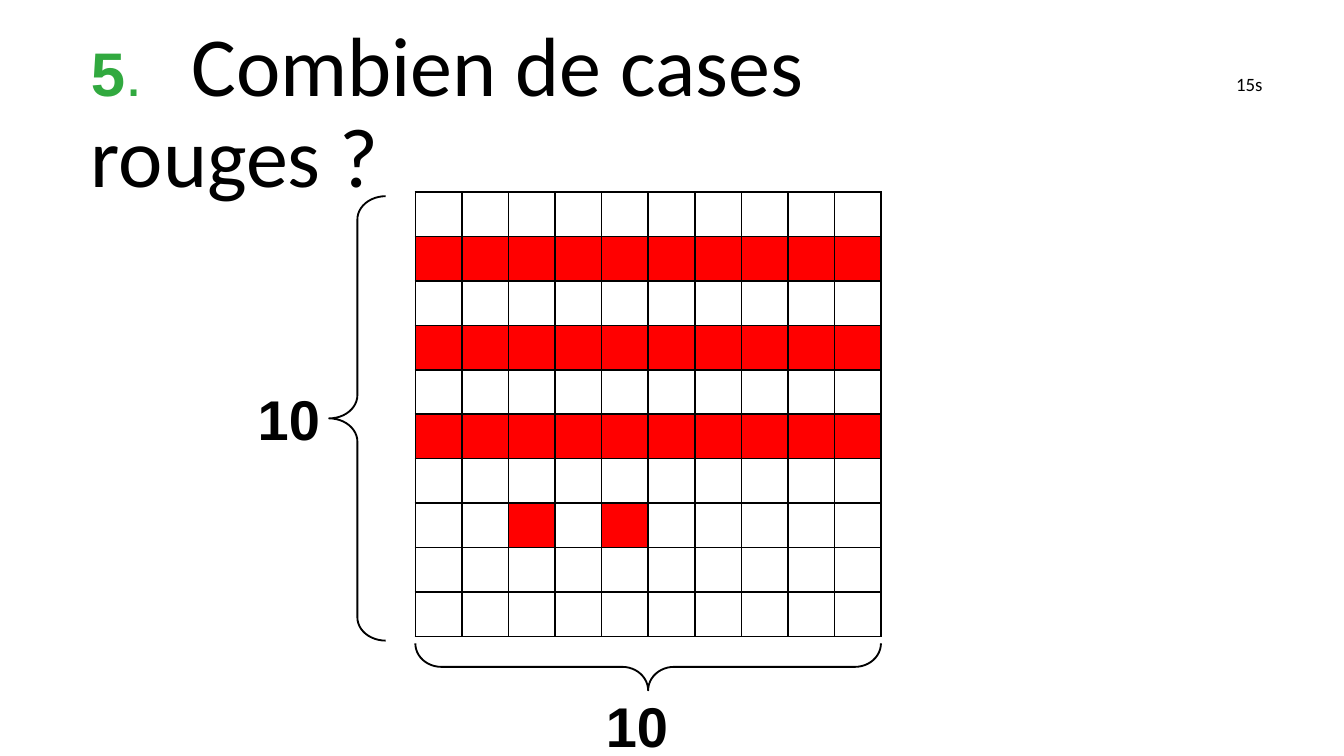
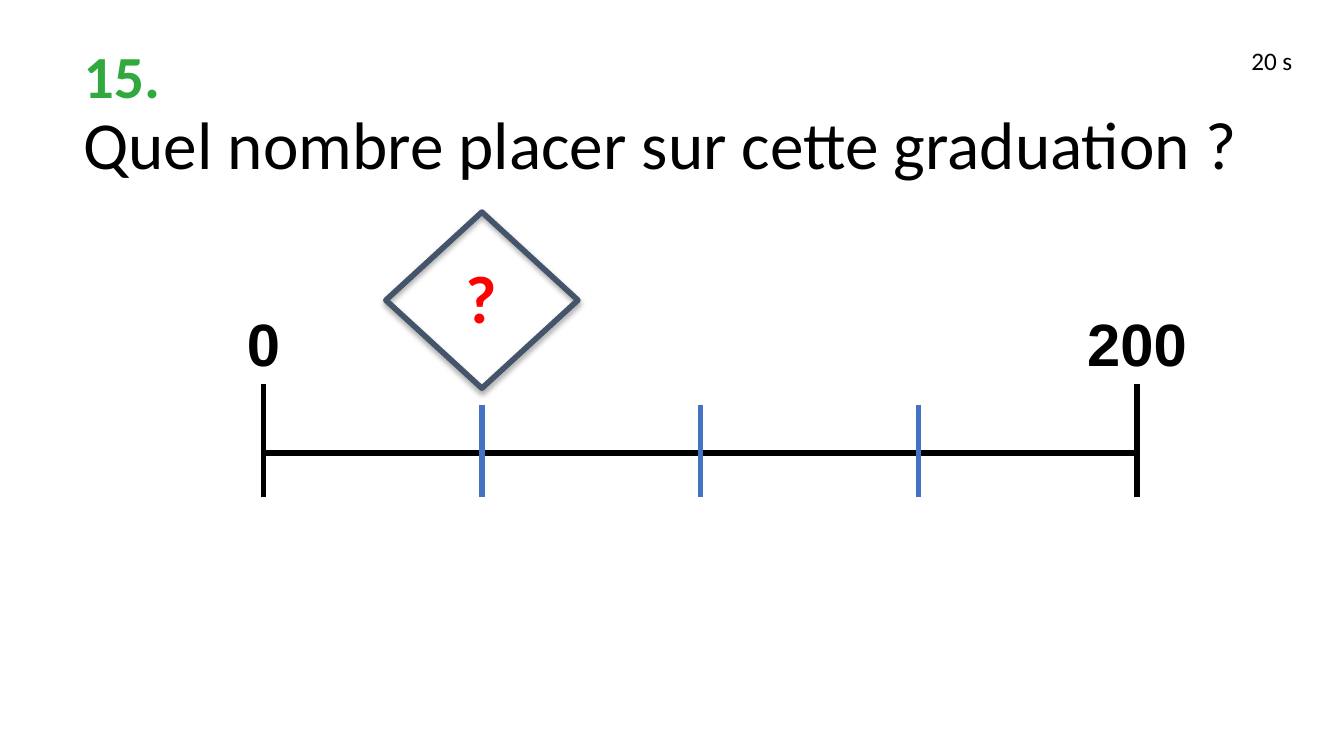
import lxml.etree
import pptx
import pptx.dml.color
import pptx.enum.shapes
import pptx.enum.text
import pptx.oxml
import pptx.oxml.ns
import pptx.util

Cm = pptx.util.Cm
Pt = pptx.util.Pt
SHAPES = pptx.enum.shapes.MSO_SHAPE
ALIGN = pptx.enum.text.PP_ALIGN
ANCHOR = pptx.enum.text.MSO_ANCHOR
AUTO_SIZE = pptx.enum.text.MSO_AUTO_SIZE
qn = pptx.oxml.ns.qn

COLORS = {"black": "000000", "white": "FFFFFF", "green": "31A93F",
          "red": "FF0000", "blue": "4472C4", "slate": "44546A"}
WIDE_INSETS = (0.25, 0.13)
NARROW_INSETS = (0.18, 0.1)


def rgb(name):
    return pptx.dml.color.RGBColor.from_string(COLORS[name])


def add_element(parent, tag, **attributes):
    return lxml.etree.SubElement(parent, qn(tag), attributes)


def format_run(run, size, color="black", font="Calibri", bold=False):
    run.font.size = Pt(size)
    run.font.name = font
    run.font.bold = bold
    run.font.color.rgb = rgb(color)


def add_text_box(slide, box, insets=WIDE_INSETS, wrap=False):
    shape = slide.shapes.add_textbox(*[Cm(value) for value in box])
    frame = shape.text_frame
    frame.margin_left = frame.margin_right = Cm(insets[0])
    frame.margin_top = frame.margin_bottom = Cm(insets[1])
    frame.word_wrap = wrap
    frame.auto_size = AUTO_SIZE.NONE if wrap else AUTO_SIZE.SHAPE_TO_FIT_TEXT
    return shape


def add_label(slide, box, text, size, centered=False, insets=WIDE_INSETS, **style):
    frame = add_text_box(slide, box, insets, wrap=centered).text_frame
    frame.text = text
    paragraph = frame.paragraphs[0]
    if centered:
        paragraph.alignment = ALIGN.CENTER
    format_run(paragraph.runs[0], size, **style)


def add_title(slide, box, insets):
    shape = add_text_box(slide, box, insets, wrap=True)
    shape.fill.solid()
    shape.fill.fore_color.rgb = rgb("white")
    shape.text_frame.vertical_anchor = ANCHOR.MIDDLE
    return shape.text_frame


def add_line(slide, start, end, color="black"):
    line = slide.shapes.add_connector(
        pptx.enum.shapes.MSO_CONNECTOR.STRAIGHT,
        *[Cm(value) for value in (*start, *end)])
    line.line.color.rgb = rgb(color)
    line.line.width = Pt(3)
    add_element(line._element.spPr, "a:effectLst")


def add_outline(slide, kind, box, color, width):
    shape = slide.shapes.add_shape(kind, *[Cm(value) for value in box])
    shape.shadow.inherit = False
    shape.fill.background()
    shape.line.color.rgb = rgb(color)
    shape.line.width = Pt(width)
    return shape


# Grid of squares, some of them red
def add_grid(slide, box, count, red_rows, red_cells):
    frame = slide.shapes.add_table(count, count, *[Cm(value) for value in box])
    table = frame.table
    table.first_row = table.horz_banding = False
    for column in table.columns:
        column.width = Cm(box[2] / count)
    for row in table.rows:
        row.height = Cm(box[3] / count)
    for row in range(count):
        for column in range(count):
            cell = table.cell(row, column)
            cell.margin_left = cell.margin_right = 0
            cell.margin_top = cell.margin_bottom = 0
            properties = cell._tc.get_or_add_tcPr()
            for side in ("a:lnL", "a:lnR", "a:lnT", "a:lnB"):
                border = add_element(properties, side, w=str(Pt(1)))
                fill = add_element(border, "a:solidFill")
                add_element(fill, "a:srgbClr", val=COLORS["black"])
            if row in red_rows or (row, column) in red_cells:
                cell.fill.solid()
                cell.fill.fore_color.rgb = rgb("red")
            else:
                cell.fill.background()


# Braces with the number of squares on the left and below the grid
def add_grid_braces(slide, box, count):
    left, top, width, height = box
    bottom = top + height
    center = left + width / 2
    side = add_outline(slide, SHAPES.LEFT_BRACE,
                       (left - 1.63, top + 0.08, 1.07, height), "black", 1)
    side.adjustments[0] = 0.41
    depth = 0.89
    under = add_outline(slide, SHAPES.LEFT_BRACE,
                        (center - depth / 2, bottom + 0.13 + depth / 2 - width / 2,
                         depth, width), "black", 1)
    under.adjustments[0] = 0.55
    under.rotation = 270
    for label_left, label_top in ((left - 3.23, top + 3.51),
                                  (center - 1.05, bottom + 0.92)):
        add_label(slide, (label_left, label_top, 1.7, 1.55), str(count), 30,
                  font="Arial", bold=True)


def build_grid_slide(slide):
    # Question
    frame = add_title(slide, (1.47, 0.79, 19.79, 2.77), WIDE_INSETS)
    frame.margin_right = Cm(1.6)
    paragraph = frame.paragraphs[0]
    paragraph.line_spacing = 0.9
    tabs = add_element(paragraph._p.get_or_add_pPr(), "a:tabLst")
    add_element(tabs, "a:tab", pos=str(Cm(1.9)), algn="l")
    parts = (("5", dict(size=33, color="green", font="Arial", bold=True)),
             (".\t", dict(size=33, color="green", font="Arial")),
             ("Combien de cases rouges ?", dict(size=45)))
    for text, style in parts:
        run = paragraph.add_run()
        run.text = text
        format_run(run, **style)

    # Grid and its dimensions
    box = (7.85, 3.63, 8.8, 8.4)
    add_grid(slide, box, 10, red_rows=(1, 3, 5), red_cells=((7, 2), (7, 4)))
    add_grid_braces(slide, box, 10)

    # Time allowed
    add_label(slide, (23.11, 1.24, 1.02, 0.69), "15s", 10.1)


# Diamond with a soft shadow, marking the unknown number
def add_unknown_marker(slide, center, top):
    width, height = 3.63, 3.33
    diamond = add_outline(slide, SHAPES.DIAMOND,
                          (center - width / 2, top, width, height), "slate", 3)
    effects = diamond._element.spPr.find(qn("a:effectLst"))
    shadow = add_element(effects, "a:outerShdw", blurRad=str(Pt(3.1)),
                         dist=str(Pt(1.8)), dir="5400000", rotWithShape="0")
    color = add_element(shadow, "a:srgbClr", val=COLORS["black"])
    add_element(color, "a:alpha", val="35000")
    add_label(slide, (center - 0.56, top + 0.71, 1.12, 1.8), "?", 36,
              color="red", bold=True)


# Number line with labelled ends and equal steps
def add_number_line(slide, box, end_labels, steps):
    left, top, width, height = box
    right, bottom = left + width, top + height
    axis = top + 1.3
    add_line(slide, (left, axis), (right, axis))
    for x, text in zip((left, right), end_labels):
        add_line(slide, (x, bottom), (x, top))
        add_label(slide, (x - 1.3, top - 1.56, 2.6, 1.4), text, 32, centered=True,
                  insets=NARROW_INSETS, font="Arial", bold=True)
    for step in range(1, steps):
        x = left + width * step / steps
        add_line(slide, (x, top + 0.39), (x, bottom), "blue")
    add_unknown_marker(slide, left + width / steps, top - 3.25)


def build_number_line_slide(slide):
    # Question
    frame = add_title(slide, (1.4, 0.79, 22.63, 2.77), NARROW_INSETS)
    frame.text = "15.\nQuel nombre placer sur cette graduation ?"
    styles = (dict(size=32, color="green", bold=True), dict(size=36))
    for paragraph, style in zip(frame.paragraphs, styles):
        paragraph.line_spacing = 0.9
        format_run(paragraph.runs[0], **style)

    # Number line
    add_number_line(slide, (4.98, 7.26, 16.51, 2.14), ("0", "200"), 4)

    # Time allowed
    add_label(slide, (23.47, 0.76, 1.22, 0.76), "20 s", 13.5, insets=NARROW_INSETS)


def main():
    presentation = pptx.Presentation()
    presentation.slide_width = Cm(25.4)
    presentation.slide_height = Cm(14.29)
    for build in (build_grid_slide, build_number_line_slide):
        build(presentation.slides.add_slide(presentation.slide_layouts[6]))
    presentation.save("out.pptx")


if __name__ == "__main__":
    main()
